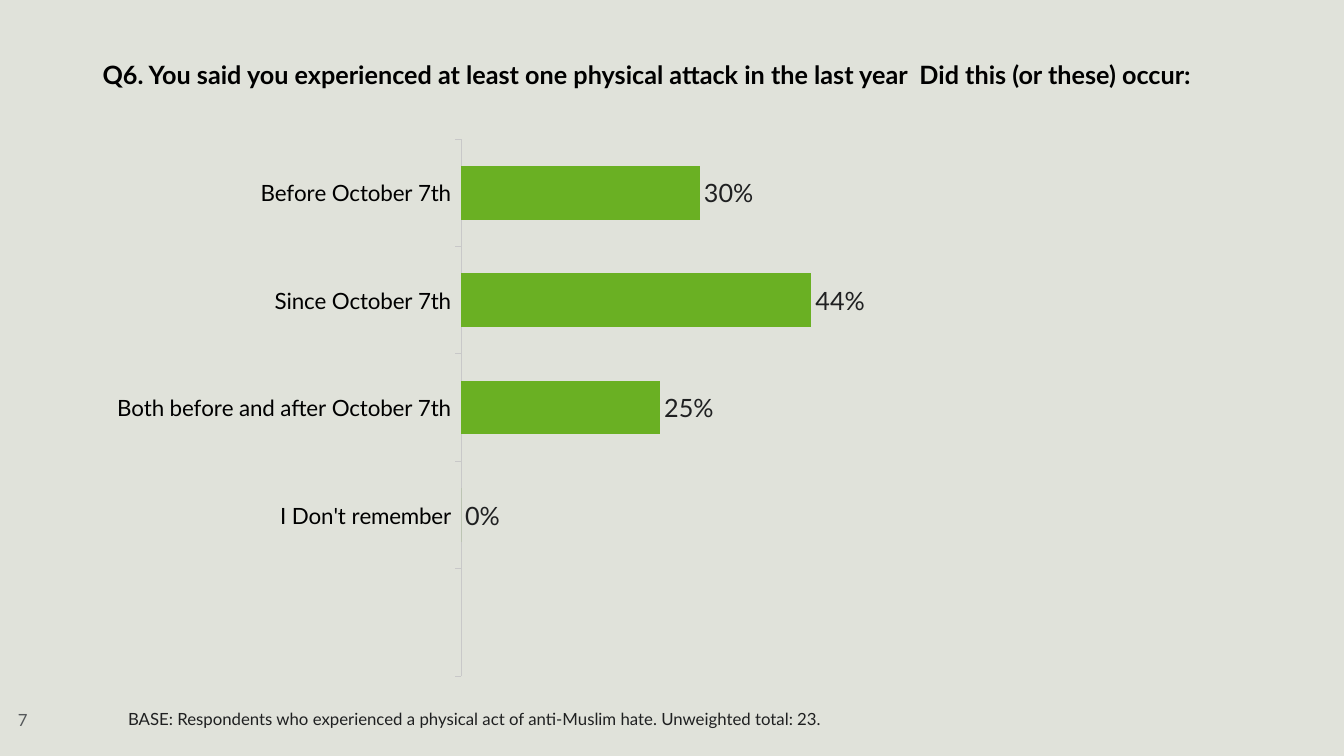
"""Build the survey slide on when physical attacks occurred."""
from dataclasses import dataclass

from lxml import etree
from pptx import Presentation
from pptx.chart.data import CategoryChartData
from pptx.dml.color import RGBColor
from pptx.enum.chart import XL_CHART_TYPE as ChartType
from pptx.enum.chart import XL_LABEL_POSITION as LabelPosition
from pptx.enum.chart import XL_TICK_LABEL_POSITION as TickLabels
from pptx.enum.chart import XL_TICK_MARK as TickMark
from pptx.enum.text import MSO_ANCHOR as Anchor
from pptx.oxml.ns import qn
from pptx.util import Pt

QUESTION = ("Q6. You said you experienced at least one physical attack "
            "in the last year  Did this (or these) occur:")
BASE_NOTE = ("BASE: Respondents who experienced a physical act of "
             "anti-Muslim hate. Unweighted total: 23.")
PAGE_NUMBER = "7"
ANSWERS = [
    ("Before October 7th", 0.30),
    ("Since October 7th", 0.44),
    ("Both before and after October 7th", 0.25),
    ("I Don't remember", 0),
    ("", None),
]


@dataclass(frozen=True)
class Theme:
    font: str = "Lato"
    background: str = "E0E2DA"
    title: str = "000000"
    body: str = "1F2021"
    muted: str = "55585A"
    bar: str = "6AB023"
    axis: str = "C8C8C8"
    large: int = 18
    medium: int = 16
    small: int = 12


THEME = Theme()
LEFT = 66.24
FOOTER_TOP, FOOTER_HEIGHT = 500.4, 28.8
CHART_FRAME = (LEFT, 91.44, 848.88, 399.6)
PLOT_AREA = {"x": 0.31, "y": 0.02, "w": 0.67, "h": 0.96}


def style_font(font, size, color, bold=False):
    font.name, font.size, font.bold = THEME.font, Pt(size), bold
    font.color.rgb = RGBColor.from_string(color)


def add_text(slide, text, frame, size, color, bold=False, indent=0, spacing=0.9):
    box = slide.shapes.add_textbox(*map(Pt, frame))
    body = box.text_frame
    body.word_wrap = True
    body.vertical_anchor = Anchor.MIDDLE
    body.margin_left = Pt(7.2 + indent)
    para = body.paragraphs[0]
    para.text = text
    para.line_spacing = spacing
    style_font(para.font, size, color, bold)


def place_plot(chart):
    plot_area = chart.element.find(".//" + qn("c:plotArea"))
    layout = plot_area.find(qn("c:layout"))
    if layout is None:
        layout = etree.Element(qn("c:layout"))
        plot_area.insert(0, layout)
    manual = etree.SubElement(layout, qn("c:manualLayout"))
    settings = {"layoutTarget": "inner", "xMode": "edge", "yMode": "edge", **PLOT_AREA}
    for name, value in settings.items():
        etree.SubElement(manual, qn("c:" + name)).set("val", str(value))


def add_answer_chart(slide):
    data = CategoryChartData(number_format="0%")
    data.categories = [answer for answer, share in ANSWERS]
    data.add_series("Series 1", [share for answer, share in ANSWERS])
    chart = slide.shapes.add_chart(
        ChartType.BAR_CLUSTERED, *map(Pt, CHART_FRAME), data).chart
    chart.has_legend = chart.has_title = False
    style_font(chart.font, THEME.large, THEME.body)
    place_plot(chart)

    answers = chart.category_axis
    answers.reverse_order = True
    answers.major_tick_mark = TickMark.OUTSIDE
    answers.tick_label_position = TickLabels.LOW
    answers.format.line.width = Pt(0.75)
    answers.format.line.color.rgb = RGBColor.from_string(THEME.axis)
    style_font(answers.tick_labels.font, THEME.medium, THEME.title)

    shares = chart.value_axis
    shares.minimum_scale, shares.maximum_scale = 0, 1
    shares.has_major_gridlines = False
    shares.visible = False

    plot = chart.plots[0]
    plot.gap_width = 100
    plot.vary_by_categories = False
    bars = plot.series[0]
    bars.format.fill.solid()
    bars.format.fill.fore_color.rgb = RGBColor.from_string(THEME.bar)
    labels = bars.data_labels
    labels.show_value = True
    labels.position = LabelPosition.OUTSIDE_END
    labels.number_format, labels.number_format_is_linked = "0%", False
    style_font(labels.font, THEME.large, THEME.body)


def main():
    deck = Presentation()
    deck.slide_width, deck.slide_height = Pt(960), Pt(540)
    slide = deck.slides.add_slide(deck.slide_layouts[6])
    slide.background.fill.solid()
    slide.background.fill.fore_color.rgb = RGBColor.from_string(THEME.background)
    add_text(slide, PAGE_NUMBER, (5.76, FOOTER_TOP, 43.92, FOOTER_HEIGHT),
             THEME.small, THEME.muted)
    add_text(slide, QUESTION, (LEFT, 28.8, 828, 51.12),
             THEME.large, THEME.title, bold=True)
    add_text(slide, BASE_NOTE, (LEFT, FOOTER_TOP, 749.52, FOOTER_HEIGHT),
             THEME.small, THEME.body, indent=18, spacing=0.8)
    add_answer_chart(slide)
    deck.save("out.pptx")


if __name__ == "__main__":
    main()
